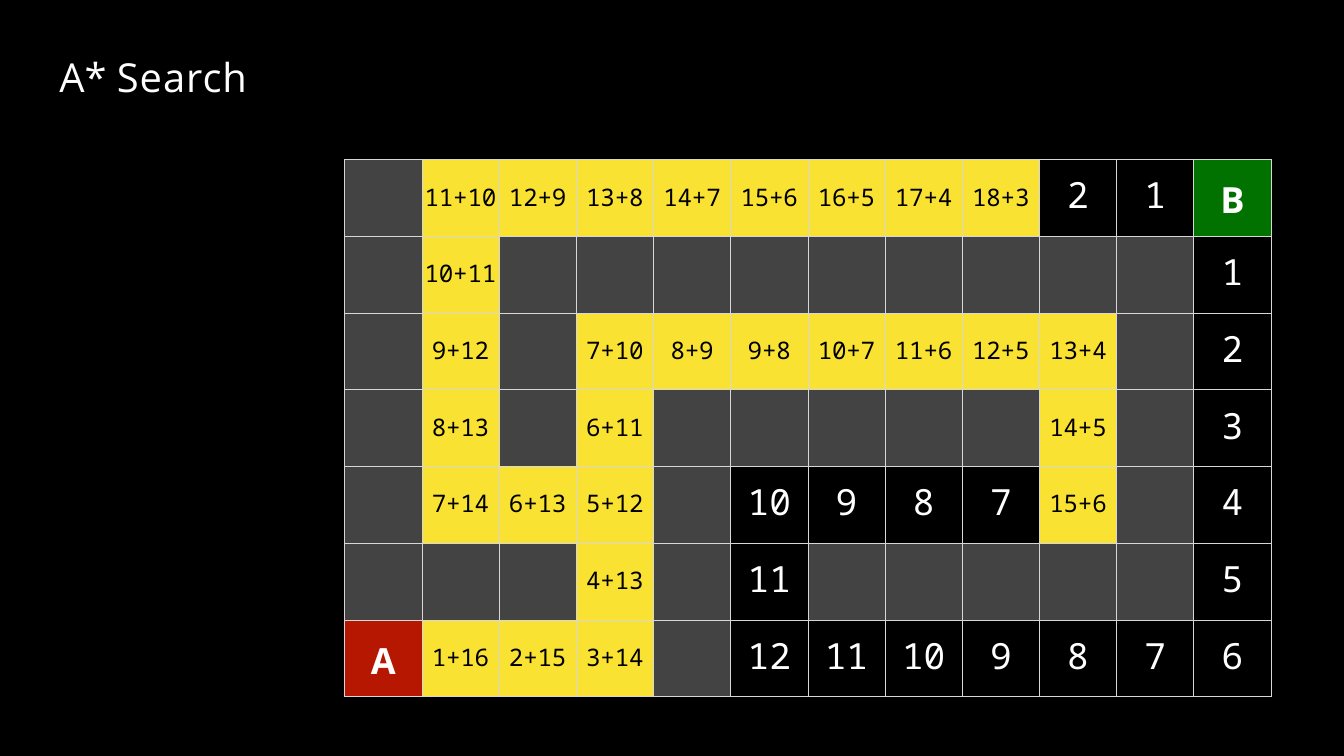
from dataclasses import dataclass

from lxml import etree
from pptx import Presentation
from pptx import util as u
from pptx.dml.color import RGBColor
from pptx.enum import text
from pptx.oxml.ns import qn


@dataclass(frozen=True)
class Theme:
    ground: str = "000000"
    ink: str = "FFFFFF"
    wall: str = "434343"
    explored: str = "FAE232"
    start: str = "B51700"
    goal: str = "017100"
    rule: str = "D6D7D6"
    sans: str = "Open Sans"
    mono: str = "Noto Sans Mono"
    title_size: float = 47
    number_size: float = 42.5
    cost_size: float = 28.5


T = Theme()
WIDTH, HEIGHT = 21.99, 12.37

# "#" is a wall, "g+h" an explored cell, a plain number an unexplored one
MAZE = [row.split() for row in (
    "# 11+10 12+9 13+8 14+7 15+6 16+5 17+4 18+3 2 1 B",
    "# 10+11 # # # # # # # # # 1",
    "# 9+12 # 7+10 8+9 9+8 10+7 11+6 12+5 13+4 # 2",
    "# 8+13 # 6+11 # # # # # 14+5 # 3",
    "# 7+14 6+13 5+12 # 10 9 8 7 15+6 # 4",
    "# # # 4+13 # 11 # # # # # 5",
    "A 1+16 2+15 3+14 # 12 11 10 9 8 7 6",
)]


def write(p, words, font, size, color, bold=False, spacing=0, align=None):
    p.alignment = align
    r = p.add_run()
    r.text = words
    r.font.name, r.font.size, r.font.bold = font, u.Pt(size), bold
    r.font.color.rgb = RGBColor.from_string(color)
    r._r.get_or_add_rPr().set("spc", str(round(spacing * 100)))


def add_borders(cell, color, width=1):
    tcPr = cell._tc.get_or_add_tcPr()
    for side in ("lnL", "lnR", "lnT", "lnB"):
        ln = etree.SubElement(tcPr, qn(f"a:{side}"), w=str(u.Pt(width)))
        fill = etree.SubElement(ln, qn("a:solidFill"))
        etree.SubElement(fill, qn("a:srgbClr"), val=color)


def cell_format(mark):
    """Return the fill, top margin and text format for a maze mark."""
    if mark == "#":
        return T.wall, 0, None
    if "+" in mark:
        return T.explored, 0.34, dict(font=T.mono, size=T.cost_size,
                                      color=T.ground, spacing=-0.2)
    if mark in "AB":
        return (T.start if mark == "A" else T.goal), 0.26, dict(
            font=T.sans, size=T.number_size, color=T.ink, bold=True, spacing=2)
    return None, 0.18, dict(font=T.mono, size=T.number_size, color=T.ink)


def add_title(s, left, top, width, height):
    sp = s.shapes.title
    sp.left, sp.top, sp.width, sp.height = map(u.Inches, (left, top, width, height))
    tf = sp.text_frame
    tf.margin_left = tf.margin_top = tf.margin_right = tf.margin_bottom = 0
    tf.vertical_anchor = text.MSO_ANCHOR.TOP
    tf.word_wrap = True
    p = tf.paragraphs[0]
    fmt = dict(font=T.sans, size=T.title_size, color=T.ink, align=text.PP_ALIGN.LEFT)
    write(p, "A* ", **fmt)
    write(p, "Search", spacing=1.1, **fmt)


def add_maze(s, left, top, width, height):
    box = map(u.Inches, (left, top, width, height))
    table = s.shapes.add_table(len(MAZE), len(MAZE[0]), *box).table
    table.first_row = table.horz_banding = False
    for i, row in enumerate(MAZE):
        for j, mark in enumerate(row):
            cell = table.cell(i, j)
            fill, margin, fmt = cell_format(mark)
            cell.margin_left = cell.margin_right = cell.margin_bottom = 0
            cell.margin_top = u.Inches(margin)
            add_borders(cell, T.rule)
            if fill:
                cell.fill.solid()
                cell.fill.fore_color.rgb = RGBColor.from_string(fill)
            else:
                cell.fill.background()
            if fmt:
                write(cell.text_frame.paragraphs[0], mark,
                      align=text.PP_ALIGN.CENTER, **fmt)


def main():
    prs = Presentation()
    prs.slide_width, prs.slide_height = u.Inches(WIDTH), u.Inches(HEIGHT)
    s = prs.slides.add_slide(prs.slide_layouts.get_by_name("Title Only"))
    s.background.fill.solid()
    s.background.fill.fore_color.rgb = RGBColor.from_string(T.ground)
    # Maze below, heading above
    add_maze(s, 5.64, 2.61, 15.16, 8.79)
    add_title(s, 0.97, 0.86, 12.65, 0.81)
    prs.save("out.pptx")


if __name__ == "__main__":
    main()
